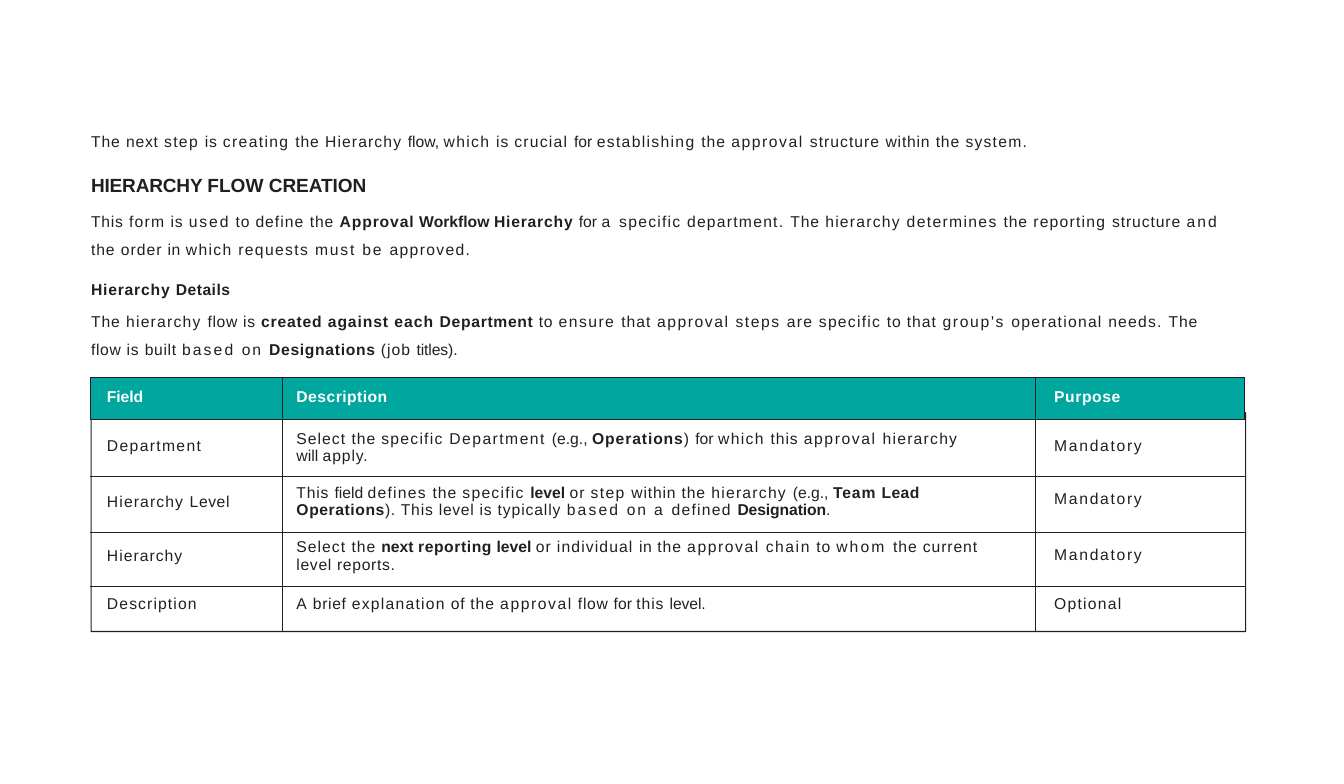
from lxml.etree import SubElement
from pptx import Presentation
from pptx.dml.color import RGBColor
from pptx.enum.text import MSO_AUTO_SIZE
from pptx.oxml.ns import qn
from pptx.util import Cm, Pt

COLORS = {"ink": "231F20", "teal": "00A79E", "white": "FFFFFF"}
FONT = "Arial"
BOLD = True

INTRO = [
    ("The ", 0.8), ("next ", 0.7), ("step ", 1.2), ("is ", 0.7), ("creating ", 1.2),
    ("the ", 0.8), ("Hierarchy ", 1), ("flow, ", 0), ("which ", 1.2), ("is ", 0.7),
    ("crucial ", 1.1), ("for ", 0), ("establishing ", 1.2), ("the ", 0.8),
    ("approval ", 1.4), ("structure ", 0.9), ("within ", 0.7), ("the ", 0.8),
    ("system.", 1.1),
]
HEADING = [("HIERARCHY ", -0.2, BOLD), ("FLOW ", 0, BOLD), ("CREATION", -0.1, BOLD)]
FORM_PURPOSE = [
    ("This ", 0.7), ("form", 1.1), (" is ", 0.7), ("used", 1.7), (" to ", 0.7),
    ("define ", 0.9), ("the ", 0.8), ("Approval", 0.8, BOLD), (" Workflow ", 0, BOLD),
    ("Hierarchy ", 0.7, BOLD), ("for ", 0), ("a ", 2), ("specific department. ", 1.1),
    ("The ", 0.8), ("hierarchy ", 1.1), ("determines ", 1.2), ("the ", 0.8),
    ("reporting ", 1.1), ("structure ", 0.8), ("and ", 1.9), ("the ", 0.8),
    ("order", 0.9), (" in ", 0.5), ("which requests ", 1.2), ("must be ", 1.6),
    ("approved.", 1.2),
]
SUBHEADING = [("Hierarchy ", 0.7, BOLD), ("Details", 0.4, BOLD)]
FLOW_DETAILS = [
    ("The ", 0.8), ("hierarchy ", 1.1), ("flow ", 0.6), ("is ", 0.7),
    ("created ", 0.7, BOLD), ("against ", 0.8, BOLD), ("each ", 0.9, BOLD),
    ("Department ", 0.6, BOLD), ("to ", 0.7), ("ensure ", 1.3), ("that ", 0.9),
    ("approval steps ", 1.4), ("are specific ", 1.1), ("to ", 0.7), ("that ", 0.9),
    ("group's ", 1.5), ("operational needs. ", 1.1), ("The ", 0.7), ("flow ", 0.6),
    ("is ", 0.7), ("built ", 0.6), ("based ", 1.9), ("on ", 1.6),
    ("Designations ", 0.6, BOLD), ("(job ", 0.9), ("titles).", -0.1),
]

DEPARTMENT_RULE = [
    ("Select ", 0.9), ("the ", 0.8), ("specific ", 1.1), ("Department ", 1.3),
    ("(e.g., ", 0), ("Operations", 0.8, BOLD), (") ", 0.8), ("for ", 0),
    ("which ", 1.2), ("this ", 0.8), ("approval ", 1.4), ("hierarchy ", 1.1),
    ("will ", 0), ("apply.", 0.8),
]
LEVEL_RULE = [
    ("This ", 0.7), ("field ", 0), ("defines ", 1.1), ("the ", 0.8), ("specific ", 1.1),
    ("level ", 0, BOLD), ("or ", 0.8), ("step ", 1.2), ("within ", 0.7), ("the ", 0.8),
    ("hierarchy ", 1.1), ("(e.g., ", 0), ("Team ", 0.8, BOLD), ("Lead ", 0.3, BOLD),
    ("Operations", 0.5, BOLD), ("). ", 0.5), ("This ", 0.7), ("level ", 0.6),
    ("is ", 0.7), ("typically ", 0.8), ("based ", 1.9), ("on ", 1.6), ("a ", 2),
    ("defined ", 1.1), ("Designation", -0.1, BOLD), (".", -0.1),
]
HIERARCHY_RULE = [
    ("Select ", 0.9), ("the ", 0.8), ("next ", 0, BOLD), ("reporting", 0.5, BOLD),
    (" level ", 0, BOLD), ("or ", 0.8), ("individual ", 1), ("in ", 0.5), ("the ", 0.8),
    ("approval chain", 1.4), (" to ", 0.7), ("whom ", 1.9), ("the current ", 0.8),
    ("level reports.", 0.6),
]
DESCRIPTION_RULE = [
    ("A ", 1.1), ("brief ", 0.6), ("explanation", 1.1), (" of ", 0.6), ("the ", 0.8),
    ("approval", 1.4), (" flow ", 0.6), ("for ", 0), ("this ", 0.8), ("level.", -0.1),
]
MANDATORY = [("Mandatory", 1.5)]

COLUMN_WIDTHS = [6.07, 23.72, 6.58]
COLUMN_INDENTS = [0.53, 0.43, 0.58]
FIELD_ROWS = [
    (1.32, (0.33, 0.33, 0.33), 0, [
        [("Field", -0.1, BOLD)], [("Description", 0.4, BOLD)], [("Purpose", 0.5, BOLD)]]),
    (1.8, (0.57, 0.33, 0.57), 2, [[("Department", 1.2)], DEPARTMENT_RULE, MANDATORY]),
    (1.75, (0.51, 0.23, 0.43), 2, [
        [("Hierarchy ", 1), ("Level", 0.5)], LEVEL_RULE, MANDATORY]),
    (1.7, (0.48, 0.2, 0.43), 1.25, [[("Hierarchy", 0.9)], HIERARCHY_RULE, MANDATORY]),
    (1.4, (0.28, 0.3, 0.28), 0, [
        [("Description", 1)], DESCRIPTION_RULE, [("Optional", 1.1)]]),
]


def rgb(name):
    return RGBColor.from_string(COLORS[name])


def write_paragraph(paragraph, phrases, color="ink", size=14):
    weights = {len(phrase) == 3 for phrase in phrases}
    font = paragraph.font
    font.name, font.size = FONT, Pt(size)
    font.color.rgb = rgb(color)
    if len(weights) == 1:
        font.bold = weights == {True}
    for text, tracking, *bold in phrases:
        run = paragraph.add_run()
        run.text = text
        if len(weights) > 1:
            run.font.bold = bool(bold)
        run.font._element.set("spc", str(round(tracking * 100)))


def add_explanation(slide):
    explanation = slide.shapes.add_textbox(Cm(2.84), Cm(4.11), Cm(35.79), Cm(7.16))
    frame = explanation.text_frame
    frame.word_wrap = True
    frame.auto_size = MSO_AUTO_SIZE.SHAPE_TO_FIT_TEXT
    frame.margin_left = frame.margin_top = Cm(0.03)
    frame.margin_right = frame.margin_bottom = 0
    sections = [
        (INTRO, 14, 0, 1),
        (HEADING, 17, 20.5, 1),
        (FORM_PURPOSE, 14, 5.9, 1.49),
        (SUBHEADING, 14, 19, 1),
        (FLOW_DETAILS, 14, 3, 1.49),
    ]
    for index, (phrases, size, gap, spacing) in enumerate(sections):
        paragraph = frame.add_paragraph() if index else frame.paragraphs[0]
        paragraph.space_before = Pt(gap)
        paragraph.line_spacing = spacing
        write_paragraph(paragraph, phrases, size=size)


def add_table_outline(slide):
    left, top, right, shoulder, bottom = (Cm(v) for v in (2.87, 11.91, 39.24, 13, 19.89))
    builder = slide.shapes.build_freeform(left, top, scale=1.0)
    builder.add_line_segments(
        [(right, shoulder), (right, bottom), (left, bottom)], close=True)
    outline = builder.convert_to_shape()
    outline.shadow.inherit = False
    outline.fill.background()
    outline.line.color.rgb = rgb("ink")
    outline.line.width = Pt(1)


def set_borders(cell, open_sides):
    properties = cell._tc.get_or_add_tcPr()
    for index, side in enumerate("LRTB"):
        border = SubElement(properties, qn(f"a:ln{side}"), w=str(Pt(1)))
        if side in open_sides:
            SubElement(border, qn("a:noFill"))
        else:
            fill = SubElement(border, qn("a:solidFill"))
            SubElement(fill, qn("a:srgbClr"), val=COLORS["ink"])
        properties.insert(index, border)


def fill_cell(cell, phrases, is_header):
    if is_header:
        cell.fill.solid()
        cell.fill.fore_color.rgb = rgb("teal")
    else:
        cell.fill.background()
    write_paragraph(
        cell.text_frame.paragraphs[0], phrases, "white" if is_header else "ink")


def add_field_table(slide):
    width = sum(COLUMN_WIDTHS)
    height = sum(row[0] for row in FIELD_ROWS)
    table = slide.shapes.add_table(
        len(FIELD_ROWS), len(COLUMN_WIDTHS),
        Cm(2.84), Cm(11.89), Cm(width), Cm(height)).table
    table.horz_banding = False
    for column, column_width in zip(table.columns, COLUMN_WIDTHS):
        column.width = Cm(column_width)
    last_row, last_column = len(FIELD_ROWS) - 1, len(COLUMN_WIDTHS) - 1
    for r, (row_height, tops, wrap_margin, texts) in enumerate(FIELD_ROWS):
        table.rows[r].height = Cm(row_height)
        for c, phrases in enumerate(texts):
            cell = table.cell(r, c)
            cell.margin_left, cell.margin_top = Cm(COLUMN_INDENTS[c]), Cm(tops[c])
            cell.margin_right = Cm(wrap_margin if c == 1 else 0)
            cell.margin_bottom = 0
            fill_cell(cell, phrases, r == 0)
            outer = {"L": c == 0, "R": c == last_column, "B": r == last_row}
            set_borders(cell, [side for side in outer if r and outer[side]])


def main():
    presentation = Presentation()
    presentation.slide_width, presentation.slide_height = Cm(42.34), Cm(24.69)
    slide = presentation.slides.add_slide(presentation.slide_layouts[6])
    add_explanation(slide)
    add_table_outline(slide)
    add_field_table(slide)
    presentation.save("out.pptx")


if __name__ == "__main__":
    main()
